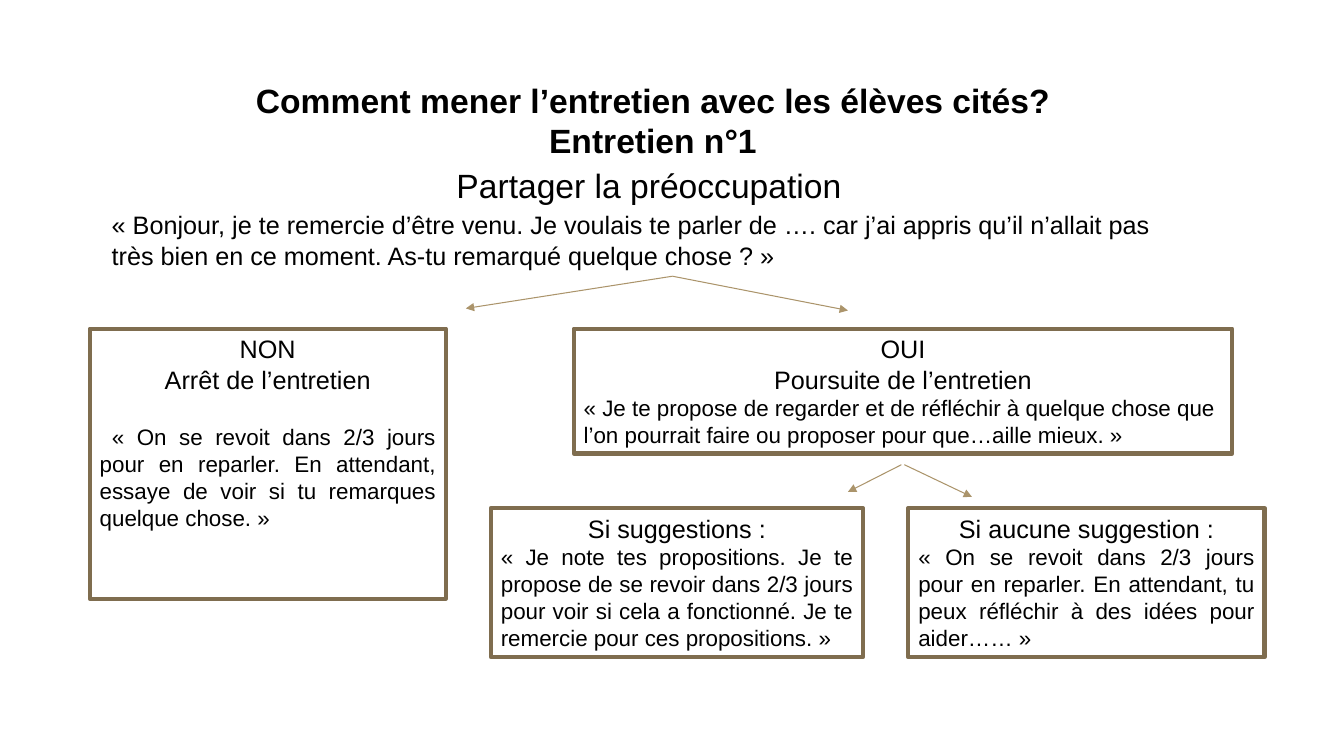
from dataclasses import dataclass

from pptx import Presentation
from pptx.dml.color import RGBColor
from pptx.enum.shapes import MSO_CONNECTOR as Connector, MSO_SHAPE as Shape
from pptx.enum.text import MSO_ANCHOR as Anchor, MSO_AUTO_SIZE as AutoSize, PP_ALIGN as Align
from pptx.oxml.ns import qn
from pptx.util import Inches, Pt
from lxml.etree import SubElement


@dataclass(frozen=True)
class Theme:
    font: str = "Arial"
    ink: RGBColor = RGBColor(0, 0, 0)
    border: RGBColor = RGBColor(0x7F, 0x6D, 0x4F)
    arrow: RGBColor = RGBColor(0xAB, 0x94, 0x6B)
    title_size: int = 24
    lead_size: int = 18
    speech_size: int = 16
    border_width: float = 3
    arrow_width: float = 0.75


THEME = Theme()

# Content: places are left, top, width, height in percent of the slide
TITLE = "Comment mener l’entretien avec les élèves cités?\vEntretien n°1"
TITLE_PLACE = (6.68, 9.87, 83.8, 12.13)
SUBTITLE = "Partager la préoccupation"
SUBTITLE_PLACE = (33.23, 21.2, 40.51, 6.67)
OPENING = [
    "« Bonjour, je te remercie d’être venu. Je voulais te parler de …. car j’ai appris qu’il n’allait pas",
    "très bien en ce moment. As-tu remarqué quelque chose ? »",
]
OPENING_PLACE = (7.58, 27.07, 84.92, 9.47)

ANSWER_TOP, FOLLOW_UP_TOP = 43.47, 67.2
# Place, headings, speech, speech alignment, space before speech, first-line indent
BOXES = [
    ((6.68, ANSWER_TOP, 26.48, 35.73), ["NON", "Arrêt de l’entretien"],
     "« On se revoit dans 2/3 jours pour en reparler. En attendant, essaye de voir si tu remarques "
     "quelque chose. »", Align.JUSTIFY, Pt(20.7), Inches(0.12)),
    ((42.69, ANSWER_TOP, 48.99, 16.53), ["OUI", "Poursuite de l’entretien"],
     "« Je te propose de regarder et de réfléchir à quelque chose que l’on pourrait faire ou proposer "
     "pour que…aille mieux. »", Align.LEFT, 0, 0),
    ((36.53, FOLLOW_UP_TOP, 27.68, 19.73), ["Si suggestions :"],
     "« Je note tes propositions. Je te propose de se revoir dans 2/3 jours pour voir si cela a "
     "fonctionné. Je te remercie pour ces propositions. »", Align.JUSTIFY, 0, 0),
    ((67.59, FOLLOW_UP_TOP, 26.5, 19.73), ["Si aucune suggestion :"],
     "« On se revoit dans 2/3 jours pour en reparler. En attendant, tu peux réfléchir à des idées pour "
     "aider…… »", Align.JUSTIFY, 0, 0),
]

OPENING_END = (50.04, 36.54)
ARROWS = [
    (OPENING_END, (34.66, 40.8)),
    (OPENING_END, (63.09, 41.07)),
    ((67.07, 61.47), (63.09, 65.07)),
    ((67.29, 61.47), (72.32, 65.73)),
]

deck = Presentation()
deck.slide_width, deck.slide_height = Inches(13.33), Inches(7.5)
page = deck.slides.add_slide(deck.slide_layouts[5])


def to_slide(*shares):
    """Turn alternating x and y percentages into slide lengths."""
    sides = (deck.slide_width, deck.slide_height)
    return [int(share * sides[i % 2] / 100) for i, share in enumerate(shares)]


def style(para, size, align, bold=False):
    para.alignment = align
    for span in para.runs:
        span.font.name, span.font.size, span.font.bold = THEME.font, Pt(size), bold
        span.font.color.rgb = THEME.ink


def write(frame, lines, size, align):
    frame.word_wrap = True
    frame.vertical_anchor = Anchor.TOP
    frame.text = "\n".join(lines)
    for para in frame.paragraphs:
        style(para, size, align)


def add_text(place, lines, size):
    box = page.shapes.add_textbox(*to_slide(*place))
    write(box.text_frame, lines, size, Align.LEFT)
    return box


def add_speech_box(place, headings, speech, align, gap, indent):
    box = page.shapes.add_shape(Shape.RECTANGLE, *to_slide(*place))
    box.shadow.inherit = False
    box.fill.background()
    box.line.color.rgb, box.line.width = THEME.border, Pt(THEME.border_width)
    write(box.text_frame, headings, THEME.lead_size, Align.CENTER)
    para = box.text_frame.add_paragraph()
    para.text = speech
    style(para, THEME.speech_size, align)
    if gap:
        para.space_before = gap
    if indent:
        para._p.get_or_add_pPr().set("indent", str(indent))


def add_arrow(start, end):
    arrow = page.shapes.add_connector(Connector.STRAIGHT, *to_slide(*start, *end))
    arrow.line.color.rgb, arrow.line.width = THEME.arrow, Pt(THEME.arrow_width)
    SubElement(arrow.line._get_or_add_ln(), qn("a:tailEnd"), type="triangle")
    SubElement(arrow._element.spPr, qn("a:effectLst"))
    return arrow


# Title and opening words
title = page.shapes.title
title.left, title.top, title.width, title.height = to_slide(*TITLE_PLACE)
write(title.text_frame, [TITLE], THEME.title_size, Align.CENTER)
title.text_frame.auto_size = AutoSize.NONE
style(title.text_frame.paragraphs[0], THEME.title_size, Align.CENTER, bold=True)
add_text(SUBTITLE_PLACE, [SUBTITLE], THEME.title_size)
opening = add_text(OPENING_PLACE, OPENING, THEME.lead_size)

# Answers and follow-ups
for entry in BOXES:
    add_speech_box(*entry)

# Branches
for start, end in ARROWS:
    branch = add_arrow(start, end)
    if start == OPENING_END:
        branch.begin_connect(opening, 2)

deck.save("out.pptx")
